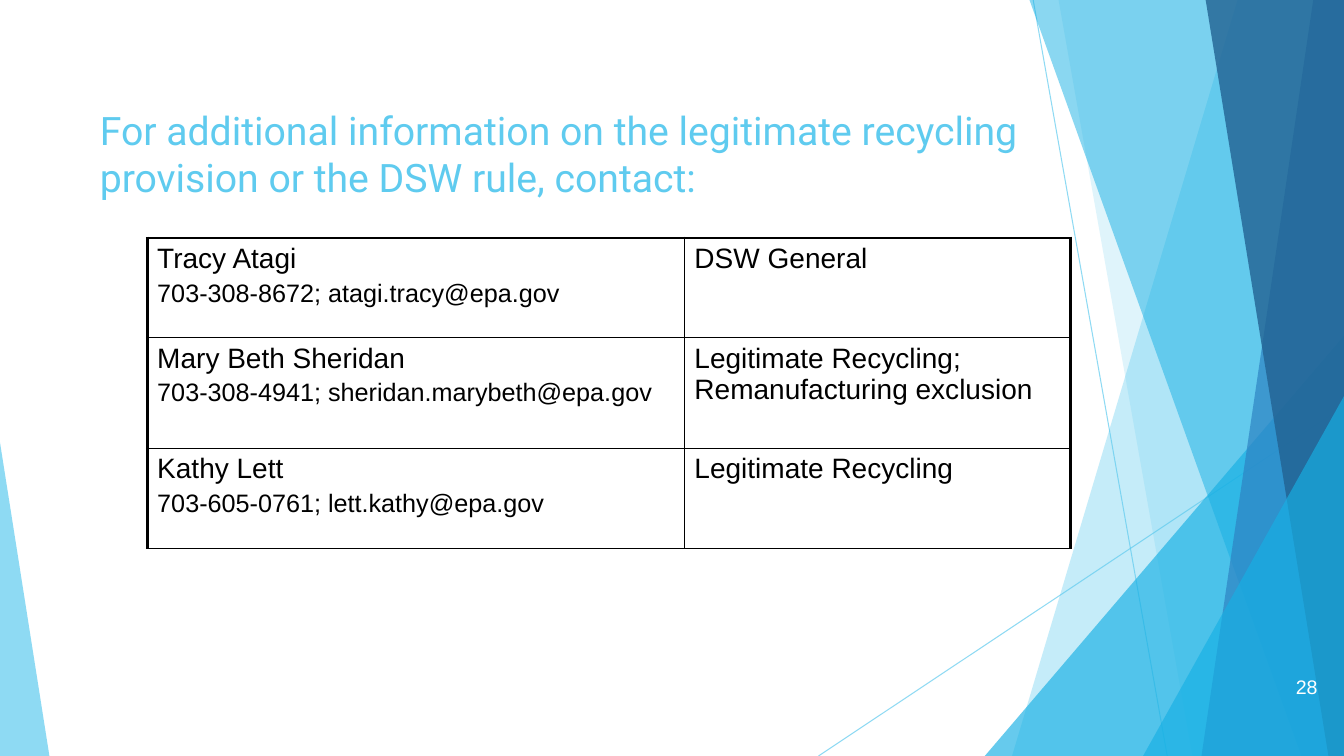
from pptx import Presentation
from pptx.dml.color import RGBColor
from pptx.enum import shapes as shp, text as txt
from pptx.oxml import parse_xml
from pptx.oxml.ns import nsdecls, qn
from pptx.util import Pt

SKY, CYAN, BLUE, NAVY = "5FCBEF", "17B0E4", "2E83C3", "226292"
WIDTH, HEIGHT = 960, 540


def paint(color_format, color, opacity=100):
    color_format.rgb = RGBColor.from_string(color)
    if opacity < 100:
        choice = color_format._xFill.find(qn("a:srgbClr"))
        choice.append(parse_xml(f'<a:alpha {nsdecls("a")} val="{opacity * 1000}"/>'))


def write(paragraph, words, size, font, color):
    run = paragraph.add_run()
    run.text = words
    run.font.size = Pt(size)
    run.font.name = font
    paint(run.font.color, color)


deck = Presentation()
deck.slide_width, deck.slide_height = Pt(WIDTH), Pt(HEIGHT)
slide = deck.slides.add_slide(deck.slide_layouts[5])

# Thin crossing lines
for x1, y1, x2, y2 in [(738, 0, 833.76, HEIGHT), (WIDTH, 290.16, 584.64, HEIGHT)]:
    ray = slide.shapes.add_connector(shp.MSO_CONNECTOR.STRAIGHT, Pt(x1), Pt(y1), Pt(x2), Pt(y2))
    ray.line.width = Pt(0.75)
    ray.line.fill.solid()
    paint(ray.line.fill.fore_color, SKY, 70)
    ray.line._ln.getparent().append(parse_xml(f'<a:effectLst {nsdecls("a")}/>'))

# Translucent facets, back to front. A band runs to the right edge from its
# top-left x to its bottom-left x; a wedge rests on the bottom edge.
facets = [
    ("band", 884.16, 722.88, SKY, 36),
    ("band", 756, 851.76, SKY, 20),
    ("wedge", (703.44, 239.76, 256.56, 1), None, CYAN, 66),
    ("band", 735.12, 929.52, CYAN, 50),
    ("band", 938.16, 858.24, BLUE, 70),
    ("band", 861.12, 948.96, NAVY, 80),
    ("wedge", (816.48, 282.96, 143.52, 1), None, CYAN, 66),
    ("wedge", (0, 316.08, 35.28, 0), None, SKY, 70),
]
for kind, start, foot, color, opacity in facets:
    if kind == "band":
        top = Pt(-0.72)
        outline = slide.shapes.build_freeform(Pt(start), top, scale=1.0)
        outline.add_line_segments(
            [(Pt(WIDTH), top), (Pt(WIDTH), Pt(HEIGHT)), (Pt(foot), Pt(HEIGHT))], close=True)
        facet = outline.convert_to_shape()
    else:
        left, top, width, apex = start
        facet = slide.shapes.add_shape(shp.MSO_SHAPE.ISOSCELES_TRIANGLE,
                                       Pt(left), Pt(top), Pt(width), Pt(HEIGHT - top))
        facet.adjustments[0] = apex
    facet.shadow.inherit = False
    facet.line.fill.background()
    facet.fill.solid()
    paint(facet.fill.fore_color, color, opacity)

# Contact table
contacts = [
    ("Tracy Atagi", "703-308-8672; atagi.tracy@epa.gov", "DSW General"),
    ("Mary Beth Sheridan", "703-308-4941; sheridan.marybeth@epa.gov",
     "Legitimate Recycling; Remanufacturing exclusion"),
    ("Kathy Lett", "703-605-0761; lett.kathy@epa.gov", "Legitimate Recycling"),
]
row_heights = [71.28, 79.2, 71.28]
column_widths = [383.76, 275.76]
contact_table = slide.shapes.add_table(3, 2, Pt(105.12), Pt(169.92), Pt(sum(column_widths)),
                                       Pt(sum(row_heights))).table
contact_table.first_row = contact_table.horz_banding = False
for column, width in zip(contact_table.columns, column_widths):
    column.width = Pt(width)
for r, (person, reach, topic) in enumerate(contacts):
    contact_table.rows[r].height = Pt(row_heights[r])
    for c, lines in enumerate([[(person, 20), (reach, 18)], [(topic, 20)]]):
        cell = contact_table.cell(r, c)
        cell.fill.background()
        for i, (words, size) in enumerate(lines):
            paragraph = cell.text_frame.add_paragraph() if i else cell.text_frame.paragraphs[0]
            paragraph.space_before = Pt(size / 5)
            write(paragraph, words, size, "Arial", "000000")
        # Heavy rule on the left, right and top of the table, thin elsewhere
        heavy = {"L": c == 0, "R": c == 1, "T": r == 0, "B": False}
        for place, (side, is_heavy) in enumerate(heavy.items()):
            rule = Pt(2.25 if is_heavy else 1)
            cell._tc.get_or_add_tcPr().insert(place, parse_xml(
                f'<a:ln{side} {nsdecls("a")} w="{rule}"><a:solidFill>'
                f'<a:srgbClr val="000000"/></a:solidFill></a:ln{side}>'))

# Page number
page_number = slide.shapes.add_textbox(Pt(894.24), Pt(475.92), Pt(54), Pt(28.8)).text_frame
page_number.word_wrap = True
page_number.vertical_anchor = txt.MSO_ANCHOR.MIDDLE
page_number.paragraphs[0].alignment = txt.PP_ALIGN.RIGHT
write(page_number.paragraphs[0], "28", 14, "Arial", "FFFFFF")

# Title, brought in front of the facets
title = slide.shapes.title
slide.shapes.element.append(title.element)
title.left, title.top, title.width, title.height = Pt(64.08), Pt(72), Pt(752.4), Pt(74.88)
title.text_frame.word_wrap = True
title.text_frame.auto_size = txt.MSO_AUTO_SIZE.NONE
title.text_frame.vertical_anchor = txt.MSO_ANCHOR.TOP
heading = title.text_frame.paragraphs[0]
heading.alignment = txt.PP_ALIGN.LEFT
write(heading, "For additional information on the legitimate recycling provision or the DSW rule, contact:",
      28, "Roboto", SKY)

deck.save("out.pptx")
